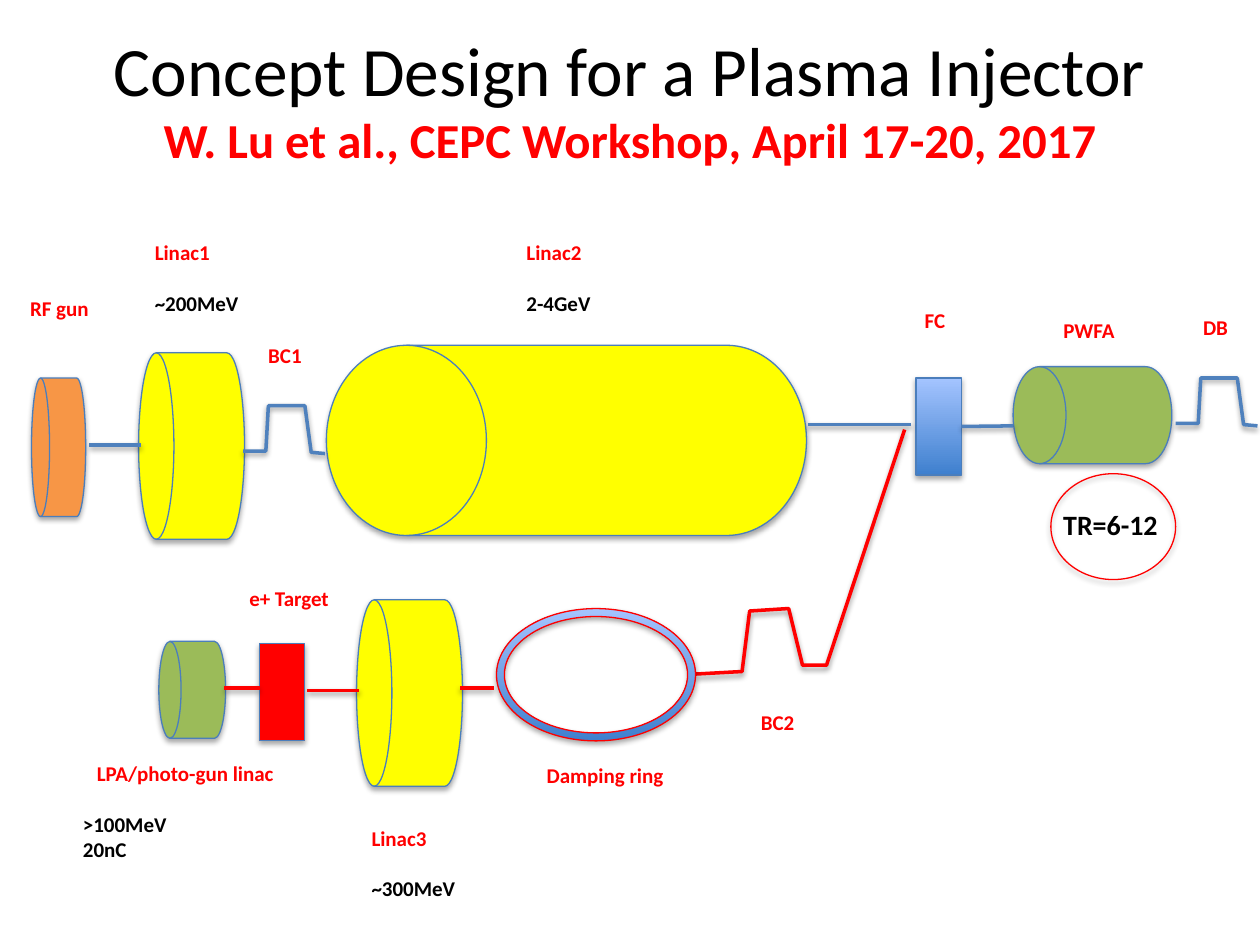
import lxml.etree
import pptx
import pptx.dml.color
import pptx.enum.shapes
import pptx.enum.text
import pptx.oxml.ns
import pptx.util

PX = 9144
RED = pptx.dml.color.RGBColor(0xFF, 0x00, 0x00)
BLACK = pptx.dml.color.RGBColor(0x00, 0x00, 0x00)
YELLOW = pptx.dml.color.RGBColor(0xFF, 0xFF, 0x00)
ORANGE = pptx.dml.color.RGBColor(0xF7, 0x96, 0x46)
GREEN = pptx.dml.color.RGBColor(0x9B, 0xBB, 0x59)
BLUE = pptx.dml.color.RGBColor(0x4F, 0x81, 0xBD)
EDGE = pptx.dml.color.RGBColor(0x4B, 0x7E, 0xBC)
DEEP_BLUE = pptx.dml.color.RGBColor(0x3F, 0x80, 0xCE)
PALE_BLUE = pptx.dml.color.RGBColor(0xA4, 0xC4, 0xFF)
BLEND = (DEEP_BLUE, PALE_BLUE)

KIND = pptx.enum.shapes.MSO_SHAPE
DRUM = KIND.FLOWCHART_DIRECT_ACCESS_STORAGE
CHICANE = ((0, 36), (18, 36), (20, 0), (49, 0), (54, 37), (65, 38))
LABEL_FRAME = {
    "word_wrap": False,
    "auto_size": pptx.enum.text.MSO_AUTO_SIZE.NONE,
    "vertical_anchor": pptx.enum.text.MSO_ANCHOR.TOP,
}
TITLE_FRAME = {
    "word_wrap": True,
    "auto_size": pptx.enum.text.MSO_AUTO_SIZE.NONE,
    "vertical_anchor": pptx.enum.text.MSO_ANCHOR.MIDDLE,
}


def apply(target, values):
    """Set each named attribute of the target."""
    for name, value in values.items():
        setattr(target, name, value)


def emu(box, left, top, *size):
    """Turn px lengths relative to a box into EMU."""
    return [length * PX for length in (box[0] + left, box[1] + top, *size)]


def style_font(span, size, color, bold=True):
    """Format the font of a text run."""
    apply(span.font, {"name": "Calibri", "size": pptx.util.Pt(size), "bold": bold})
    span.font.color.rgb = color


def finish(item, color, width, opacity):
    """Outline an item and give it a soft shadow below."""
    apply(item.line, {"width": pptx.util.Pt(width)})
    item.line.color.rgb = color
    qn = pptx.oxml.ns.qn
    effects = lxml.etree.SubElement(item._element.spPr, qn("a:effectLst"))
    shadow = lxml.etree.SubElement(
        effects, qn("a:outerShdw"), blurRad="40000", dist="22000", dir="5400000", rotWithShape="0"
    )
    black = lxml.etree.SubElement(shadow, qn("a:srgbClr"), val="000000")
    lxml.etree.SubElement(black, qn("a:alpha"), val=str(opacity * 1000))


def add_part(page, box, kind, place, fill, edge=EDGE):
    """Add a machine part, plain, blended or hollow."""
    part = page.shapes.add_shape(kind, *emu(box, *place))
    if kind == DRUM:
        part.rotation = 180
    if fill is None:
        part.fill.background()
    elif fill is BLEND:
        part.fill.gradient()
        part.fill.gradient_angle = 90
        for stop, color in zip(part.fill.gradient_stops, BLEND):
            stop.color.rgb = color
    else:
        part.fill.solid()
        part.fill.fore_color.rgb = fill
    finish(part, edge, 0.75, 35)
    return part


def add_beam(page, box, start, end, color):
    """Add a straight piece of beam line."""
    beam = page.shapes.add_connector(
        pptx.enum.shapes.MSO_CONNECTOR.STRAIGHT, *emu(box, *start), *emu(box, *end)
    )
    finish(beam, color, 2, 38)
    return beam


def add_bent_beam(page, box, points, color):
    """Add a beam line that bends at each point."""
    spots = [(box[0] + x, box[1] + y) for x, y in points]
    builder = page.shapes.build_freeform(*spots[0], scale=PX)
    builder.add_line_segments(spots[1:], close=False)
    beam = builder.convert_to_shape()
    beam.fill.background()
    finish(beam, color, 2, 38)


def add_label(page, box, place, name, details=(), size=12, color=RED):
    """Add a name with optional details set apart below it."""
    frame = page.shapes.add_textbox(*emu(box, *place)).text_frame
    apply(frame, LABEL_FRAME)
    for index, text in enumerate((name, *details)):
        para = frame.add_paragraph() if index else frame.paragraphs[0]
        if index == 1:
            para.space_before = pptx.util.Pt(14.6)
        span = para.add_run()
        span.text = text
        style_font(span, size, BLACK if index else color)
    return frame


def add_title(page, box):
    """Fill the title placeholder with the heading and its credit."""
    title = page.shapes.title
    apply(title, dict(zip(("left", "top", "width", "height"), emu((0, 0), *box))))
    apply(title.text_frame, TITLE_FRAME)
    para = title.text_frame.paragraphs[0]
    para.alignment = pptx.enum.text.PP_ALIGN.CENTER
    heading = para.add_run()
    heading.text = "Concept Design for a Plasma Injector"
    style_font(heading, 39.6, BLACK, False)
    para.add_line_break()
    credit = para.add_run()
    credit.text = "W. Lu et al., CEPC Workshop, April 17-20, 2017"
    style_font(credit, 27.9, RED)


def add_electron_line(page, box):
    """Draw the upper line from the RF gun to the plasma stage."""
    for place, fill in (
        ((11, 115, 43, 110), ORANGE),
        ((96, 95, 84, 148), YELLOW),
        ((245, 89, 381, 151), YELLOW),
        ((790, 106, 126, 77), GREEN),
    ):
        add_part(page, box, DRUM, place, fill)
    combiner = add_part(page, box, KIND.RECTANGLE, (713, 115, 36, 77), BLEND)
    for left, top in ((179, 137), (919, 115)):
        add_bent_beam(page, box, [(left + x, top + y) for x, y in CHICANE], BLUE)
    add_beam(page, box, (57, 168), (98, 168), BLUE)
    add_beam(page, box, (627, 152), (709, 152), BLUE)
    add_beam(page, box, (749, 153), (790, 153), BLUE).begin_connect(combiner, 3)
    for place, *texts in (
        ((0, 45, 71, 100), "RF gun"),
        ((99, 0, 92, 145), "Linac1", ["~200MeV"]),
        ((394, 0, 76, 145), "Linac2", ["2-4GeV"]),
        ((189, 82, 49, 100), "BC1"),
        ((710, 54, 39, 100), "FC"),
        ((820, 62, 62, 91), "PWFA"),
        ((931, 60, 43, 100), "DB"),
    ):
        add_label(page, box, place, *texts)
    add_label(page, box, (820, 213, 96, 67), "TR=6-12", size=16, color=BLACK)
    add_part(page, box, KIND.OVAL, (820, 191, 99, 84), None, RED)


def add_positron_line(page, box):
    """Draw the lower line from the positron source to the merge."""
    merge = ((662, 0), (600, 187), (581, 187), (570, 142), (539, 144), (533, 192), (496, 194))
    add_bent_beam(page, box, merge, RED)
    ring = add_part(page, box, KIND.DONUT, (338, 142, 158, 105), BLEND, RED)
    ring.adjustments[0] = 0.06
    add_part(page, box, DRUM, (70, 168, 53, 77), GREEN)
    add_part(page, box, DRUM, (227, 135, 84, 148), YELLOW)
    add_part(page, box, KIND.RECTANGLE, (150, 170, 36, 77), RED)
    for left, right, level in ((122, 150, 205), (188, 229, 207), (309, 336, 205)):
        add_beam(page, box, (left, level), (right, level), RED)
    source = add_label(
        page, box, (0, 258, 189, 151), "LPA/photo-gun linac", [">100MeV", "20nC"]
    )
    source.paragraphs[0]._p.get_or_add_pPr().set("indent", str(11 * PX))
    for place, *texts in (
        ((132, 119, 95, 100), "e+ Target"),
        ((368, 259, 120, 100), "Damping ring"),
        ((538, 217, 49, 100), "BC2"),
        ((229, 309, 92, 145), "Linac3", ["~300MeV"]),
    ):
        add_label(page, box, place, *texts)


def main():
    """Build the deck and save it."""
    deck = pptx.Presentation()
    apply(deck, {"slide_width": 1000 * PX, "slide_height": 750 * PX})
    page = deck.slides.add_slide(deck.slide_layouts[5])
    add_title(page, (50, 15, 900, 125))
    add_electron_line(page, (14, 185))
    add_positron_line(page, (56, 341))
    deck.save("out.pptx")


if __name__ == "__main__":
    main()
